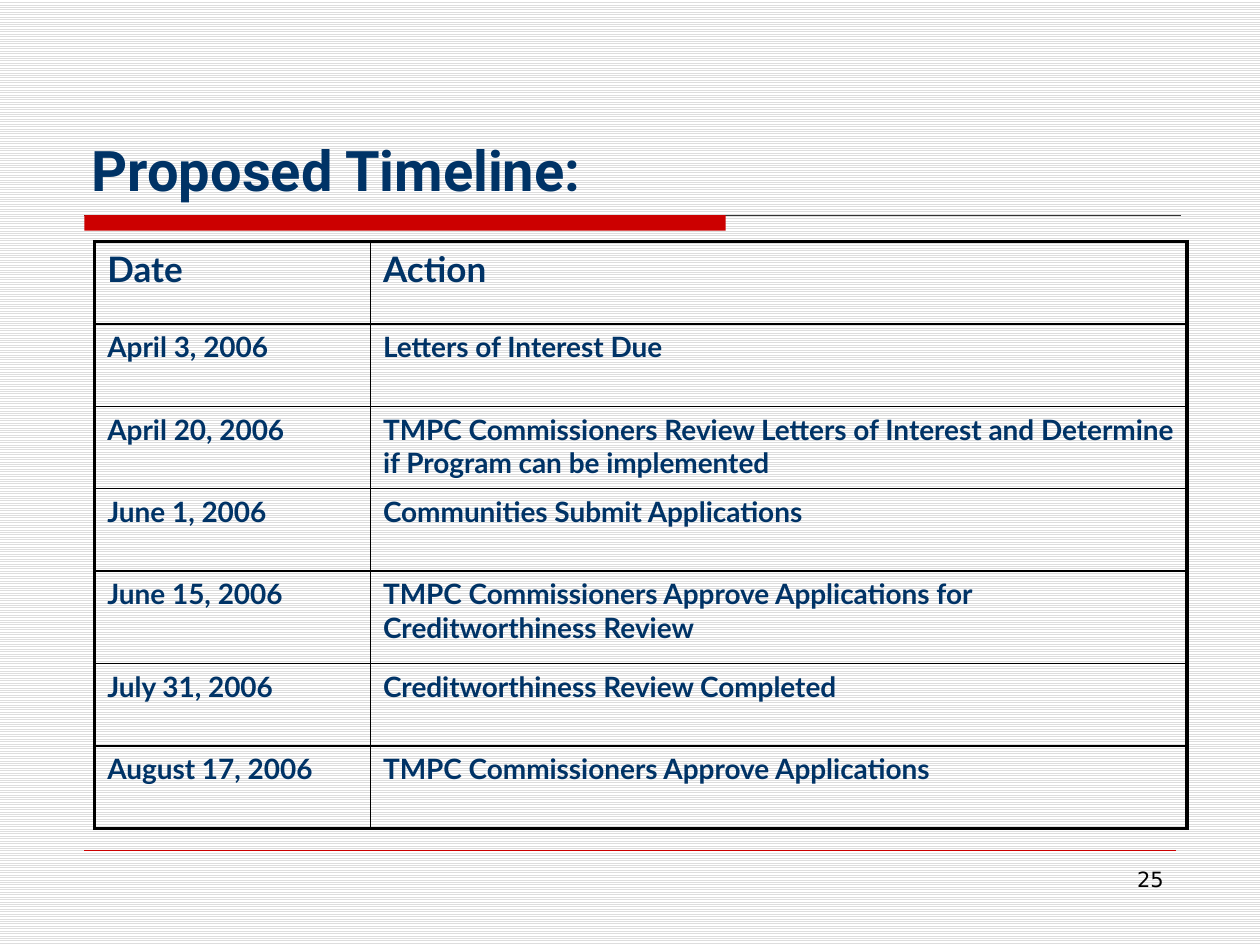
import pptx
import pptx.util
import pptx.dml.color
import pptx.enum.dml
import pptx.enum.shapes
import pptx.enum.text
import pptx.oxml
import pptx.oxml.ns

Cm, Pt = pptx.util.Cm, pptx.util.Pt
rgb = pptx.dml.color.RGBColor.from_string
anchor = pptx.enum.text.MSO_ANCHOR
align = pptx.enum.text.PP_ALIGN
hues = {"navy": "003366", "red": "CC0000", "black": "000000",
        "dark": "333333", "grey": "DDDDDD", "white": "FFFFFF"}


def write(frame, text, font, size, hue, bold=False):
    frame.word_wrap = True
    para = frame.paragraphs[0]
    run = para.add_run()
    run.text = text
    run.font.name = font
    run.font.size = Pt(size)
    run.font.bold = bold
    run.font.color.rgb = rgb(hues[hue])
    return para


deck = pptx.Presentation()
deck.slide_width, deck.slide_height = Cm(25.4), Cm(19.05)
slide = deck.slides.add_slide(deck.slide_layouts[6])
shapes = slide.shapes

# Striped background
fill = slide.background.fill
fill.patterned()
fill.pattern = pptx.enum.dml.MSO_PATTERN.LIGHT_HORIZONTAL
fill.fore_color.rgb = rgb(hues["grey"])
fill.back_color.rgb = rgb(hues["white"])

# Rules below the title and above the page number
for right, y, hue, width in [(23.8, 4.34, "dark", 0.75), (23.7, 17.15, "red", 0.25)]:
    line = shapes.add_connector(pptx.enum.shapes.MSO_CONNECTOR.STRAIGHT,
                                Cm(1.7), Cm(y), Cm(right), Cm(y))
    line.line.color.rgb = rgb(hues[hue])
    line.line.width = Pt(width)
    line._element.spPr.append(pptx.oxml.parse_xml(
        f"<a:effectLst {pptx.oxml.ns.nsdecls('a')}/>"))

# Red bar
bar = shapes.add_shape(pptx.enum.shapes.MSO_SHAPE.RECTANGLE,
                       Cm(1.7), Cm(4.34), Cm(12.93), Cm(0.31))
bar.shadow.inherit = False
bar.fill.solid()
bar.fill.fore_color.rgb = rgb(hues["red"])
bar.line.fill.background()

# Title
title = shapes.add_textbox(Cm(1.6), Cm(0.84), Cm(22.23), Cm(3.38)).text_frame
title.vertical_anchor = anchor.BOTTOM
write(title, "Proposed Timeline:", "Roboto", 32, "navy", True)

# Page number
page = shapes.add_textbox(Cm(18.2), Cm(17.35), Cm(5.51), Cm(1.32)).text_frame
write(page, "25", "DejaVu Sans", 12, "black").alignment = align.RIGHT

# Timeline table
rows = [
    ("Date", "Action"),
    ("April 3, 2006", "Letters of Interest Due"),
    ("April 20, 2006", "TMPC Commissioners Review Letters of Interest and "
                       "Determine if Program can be implemented"),
    ("June 1, 2006", "Communities Submit Applications"),
    ("June 15, 2006", "TMPC Commissioners Approve Applications for "
                      "Creditworthiness Review"),
    ("July 31, 2006", "Creditworthiness Review Completed"),
    ("August 17, 2006", "TMPC Commissioners Approve Applications"),
]
high = [1.66, 1.66, 1.66, 1.66, 1.87, 1.66, 1.66]
wide = [5.56, 16.46]
last = len(rows) - 1
table = shapes.add_table(len(rows), 2, Cm(1.91), Cm(4.87),
                         Cm(sum(wide)), Cm(sum(high))).table
table.first_row = table.horz_banding = False
for col, width in zip(table.columns, wide):
    col.width = Cm(width)

for r, texts in enumerate(rows):
    table.rows[r].height = Cm(high[r])
    size = 16 if r else 20
    for c, text in enumerate(texts):
        cell = table.cell(r, c)
        para = write(cell.text_frame, text, "Lato", size, "navy", True)
        para.space_before = Pt(size * 0.2)
        # Thick border on the outer edge, thin inside
        outer = {"L": c == 0, "R": c == 1, "T": r == 0, "B": r == last}
        props = cell._tc.get_or_add_tcPr()
        for side, edge in outer.items():
            width = Pt(2.25 if edge else 1)
            props.append(pptx.oxml.parse_xml(
                f'<a:ln{side} {pptx.oxml.ns.nsdecls("a")} w="{width}"><a:solidFill>'
                f'<a:srgbClr val="{hues["black"]}"/></a:solidFill></a:ln{side}>'))
        cell.fill.background()

deck.save("out.pptx")
